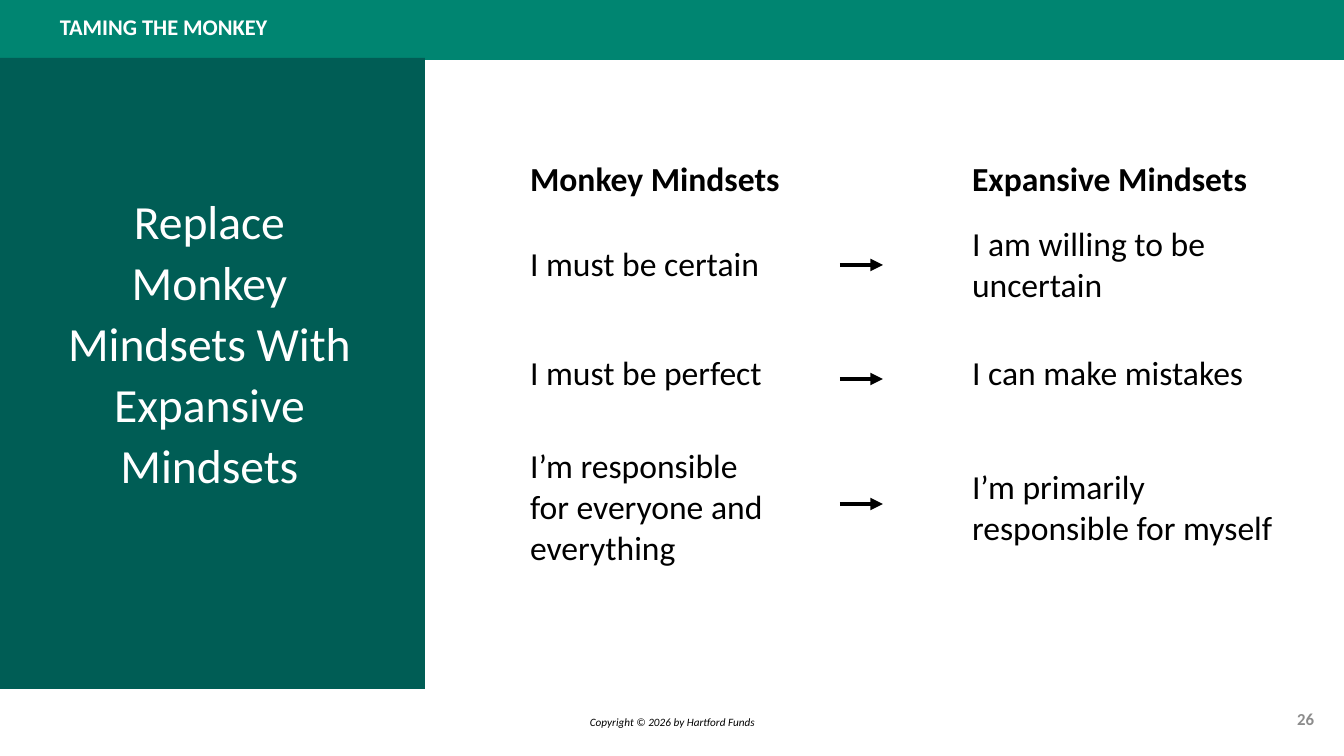
from lxml import etree
from pptx import Presentation
from pptx.dml.color import RGBColor
from pptx.enum.shapes import MSO_CONNECTOR, MSO_SHAPE
from pptx.enum.text import MSO_ANCHOR, MSO_AUTO_SIZE, PP_ALIGN
from pptx.oxml.ns import qn
from pptx.util import Emu, Pt

RECTANGLE = MSO_SHAPE.RECTANGLE
STRAIGHT = MSO_CONNECTOR.STRAIGHT
TOP, MIDDLE = MSO_ANCHOR.TOP, MSO_ANCHOR.MIDDLE
LEFT, CENTER, RIGHT = PP_ALIGN.LEFT, PP_ALIGN.CENTER, PP_ALIGN.RIGHT
NO_AUTOSIZE = MSO_AUTO_SIZE.NONE
TITLE_ONLY_LAYOUT = 5
EMU_PER_PX = 12192000 / 1344
FONT = "Calibri"
COLORS = {
    "band": "008571",
    "panel": "005D55",
    "white": "FFFFFF",
    "black": "000000",
    "number": "8C8C8C",
}
FORMATS = {
    "section": {"size": Pt(16), "bold": True, "color": "white"},
    "title": {"size": Pt(34), "bold": False, "color": "white"},
    "heading": {"size": Pt(24), "bold": True, "color": "black"},
    "mindset": {"size": Pt(24), "bold": False, "color": "black"},
    "copyright": {"size": Pt(8), "italic": True, "color": "black"},
    "number": {"size": Pt(12), "bold": True, "color": "number"},
}
MINDSETS = [
    ("Monkey Mindsets", "Expansive Mindsets"),
    ("I must be certain", "I am willing to be uncertain"),
    ("I must be perfect", "I can make mistakes"),
    ("I’m responsible\vfor everyone and everything", "I’m primarily responsible for myself"),
]


def px(length):
    return Emu(round(length * EMU_PER_PX))


def rgb(name):
    return RGBColor.from_string(COLORS[name])


def write_text(text_frame, text, format_name, alignment=LEFT):
    text_frame.text = text
    paragraph = text_frame.paragraphs[0]
    paragraph.alignment = alignment
    for run in paragraph.runs:
        run.font.name = FONT
        for name, value in FORMATS[format_name].items():
            if name == "color":
                run.font.color.rgb = rgb(value)
            else:
                setattr(run.font, name, value)
    return paragraph


def add_label(slide, box, text, format_name, alignment=LEFT):
    text_frame = slide.shapes.add_textbox(*map(px, box)).text_frame
    text_frame.word_wrap = True
    text_frame.vertical_anchor = MIDDLE
    return write_text(text_frame, text, format_name, alignment)


def add_block(slide, box, color):
    shape = slide.shapes.add_shape(RECTANGLE, *map(px, box))
    shape.shadow.inherit = False
    shape.fill.solid()
    shape.fill.fore_color.rgb = rgb(color)
    shape.line.fill.background()


def add_header(slide, left, top, width, height):
    add_block(slide, (left, top, width, height), "band")
    paragraph = add_label(slide, (left + 50, top, 811, height), "TAMING THE MONKEY", "section")
    paragraph.line_spacing = 0.75


def add_title_panel(slide, left, top, width, height):
    add_block(slide, (left, top, width, height), "panel")
    title = slide.shapes.title
    title.left, title.top = px(left - 8), px(top + 125)
    title.width, title.height = px(385), px(317)
    text_frame = title.text_frame
    text_frame.word_wrap = True
    text_frame.auto_size = NO_AUTOSIZE
    text_frame.vertical_anchor = TOP
    text = "Replace Monkey Mindsets With Expansive Mindsets"
    paragraph = write_text(text_frame, text, "title", CENTER)
    paragraph.line_spacing = 1.07
    paragraph.space_before = Pt(0)
    paragraph.space_after = Pt(8)
    properties = paragraph._p.get_or_add_pPr()
    properties.set("marL", str(px(50)))
    properties.set("indent", "0")
    slide.shapes._spTree.append(title._element)


def add_arrow(slide, left, middle, length):
    arrow = slide.shapes.add_connector(
        STRAIGHT, px(left), px(middle), px(left + length), px(middle)
    )
    arrow.line.color.rgb = rgb("black")
    arrow.line.width = Pt(3)
    properties = arrow._element.spPr
    etree.SubElement(properties.find(qn("a:ln")), qn("a:tailEnd"), type="triangle")
    etree.SubElement(properties, qn("a:effectLst"))


def add_mindsets(slide, left, top, width, height):
    frame = slide.shapes.add_table(len(MINDSETS), 3, *map(px, (left, top, width, height)))
    table = frame.table
    table.first_row = False
    table.horz_banding = False
    for column, column_width in zip(table.columns, (374, 68, 333)):
        column.width = px(column_width)
    for row, row_height in zip(table.rows, (55, 115, 103, 165)):
        row.height = px(row_height)
    for cell in table.iter_cells():
        cell.fill.background()
        cell.vertical_anchor = MIDDLE
    for row_index, (monkey, expansive) in enumerate(MINDSETS):
        format_name = "mindset" if row_index else "heading"
        write_text(table.cell(row_index, 0).text_frame, monkey, format_name)
        write_text(table.cell(row_index, 2).text_frame, expansive, format_name)
    for offset in (112, 226, 351):
        add_arrow(slide, left + 320, top + offset, 43)


def add_footer(slide, left, top, width, height):
    text = "Copyright © 2026 by Hartford Funds"
    add_label(slide, (left + 230, top, 885, height), text, "copyright", CENTER)
    add_label(slide, (left + width - 333, top + 5, 313, 52), "26", "number", RIGHT)


def main():
    presentation = Presentation()
    presentation.slide_width, presentation.slide_height = px(1344), px(756)
    slide = presentation.slides.add_slide(presentation.slide_layouts[TITLE_ONLY_LAYOUT])
    add_header(slide, 0, 0, 1344, 60)
    add_title_panel(slide, 0, 58, 425, 631)
    add_mindsets(slide, 520, 153, 775, 438)
    add_footer(slide, 0, 688, 1344, 68)
    presentation.save("out.pptx")


if __name__ == "__main__":
    main()
